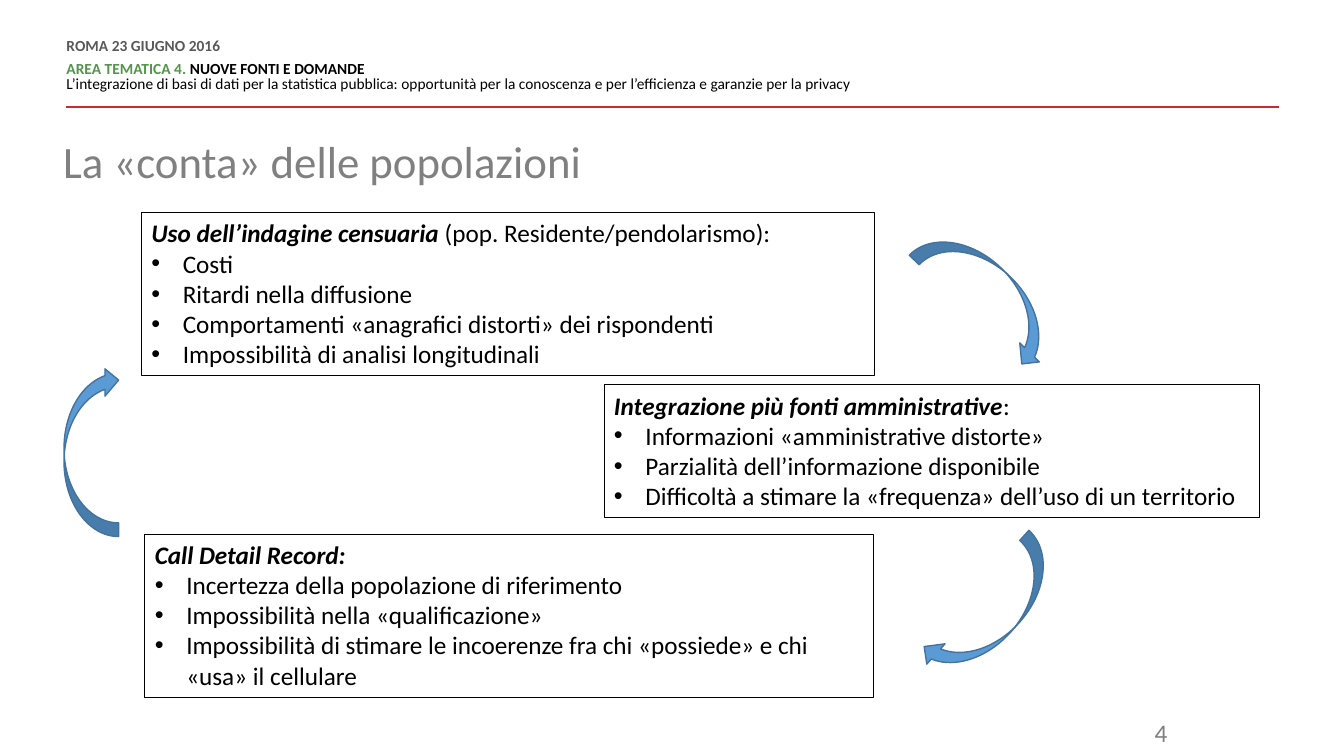
import dataclasses

import pptx
import pptx.dml.color
import pptx.enum.shapes
import pptx.enum.text
import pptx.oxml
import pptx.oxml.ns
import pptx.util

Pt = pptx.util.Pt
RGB = pptx.dml.color.RGBColor.from_string
ALIGN = pptx.enum.text.PP_ALIGN
ANCHOR = pptx.enum.text.MSO_ANCHOR
RECTANGLE = pptx.enum.shapes.MSO_SHAPE.RECTANGLE
CURVED_ARROW = pptx.enum.shapes.MSO_SHAPE.CURVED_DOWN_ARROW
STRAIGHT = pptx.enum.shapes.MSO_CONNECTOR.STRAIGHT


@dataclasses.dataclass(frozen=True)
class Theme:
    """Colours, font and type sizes of the slide."""
    font: str = "Calibri"
    ink: str = "000000"
    date: str = "595959"
    area: str = "53954A"
    rule: str = "C72A31"
    title: str = "808080"
    number: str = "7F7F7F"
    arrow: str = "5B9BD5"
    arrow_edge: str = "43739E"
    header_size: float = 11
    body_size: float = 18
    title_size: float = 32


THEME = Theme()

METHODS = [
    ((101, 152, 523.5, 116), "Uso dell’indagine censuaria ", "(pop. Residente/pendolarismo):",
     ["Costi", "Ritardi nella diffusione",
      "Comportamenti «anagrafici distorti» dei rispondenti",
      "Impossibilità di analisi longitudinali"]),
    ((431.5, 275, 468, 94.5), "Integrazione più fonti amministrative", ":",
     ["Informazioni «amministrative distorte»",
      "Parzialità dell’informazione disponibile",
      "Difficoltà a stimare la «frequenza» dell’uso di un territorio"]),
    ((103.5, 381.5, 520.5, 116.5), "Call Detail Record:", "",
     ["Incertezza della popolazione di riferimento",
      "Impossibilità nella «qualificazione»",
      "Impossibilità di stimare le incoerenze fra chi «possiede» e chi «usa» il cellulare"]),
]

CYCLE = [((646, 191, 121.5, 39), 44),
         ((648, 417.5, 121.5, 39), 132),
         ((4.5, 303, 121.5, 39), 270)]


def apply(target, values):
    """Set each named attribute of the target."""
    for name, value in values.items():
        setattr(target, name, value)


def frame_text(shape, inset=None, anchor=ANCHOR.TOP):
    """Prepare the shape's text frame and return it."""
    frame = shape.text_frame
    apply(frame, {"word_wrap": True, "vertical_anchor": anchor})
    if inset is not None:
        for side in ("left", "top", "right", "bottom"):
            setattr(frame, f"margin_{side}", Pt(inset))
    return frame


def add_run(paragraph, text, size, color, bold=False, italic=False):
    """Append one formatted run."""
    run = paragraph.add_run()
    run.text = text
    apply(run.font, {"name": THEME.font, "size": Pt(size), "bold": bold, "italic": italic})
    run.font.color.rgb = RGB(color)


def add_bullet(paragraph):
    """Give the paragraph a hanging round bullet."""
    properties = paragraph._p.get_or_add_pPr()
    properties.set("marL", str(Pt(22.5)))
    properties.set("indent", str(-Pt(22.5)))
    for tag, key, value in (("buFont", "typeface", "Arial"), ("buChar", "char", "•")):
        bullet = pptx.oxml.parse_xml(f'<a:{tag} {pptx.oxml.ns.nsdecls("a")} {key}="{value}"/>')
        properties.append(bullet)


def add_header(slide, left, top, width, height):
    """Draw the event lines and the rule below them."""
    event = slide.shapes.add_textbox(Pt(left), Pt(top), Pt(656), Pt(height))
    frame = frame_text(event, inset=0)
    lines = [
        [("ROMA 23 GIUGNO 2016", THEME.date, True)],
        [("AREA TEMATICA 4. ", THEME.area, True), ("NUOVE FONTI E DOMANDE", THEME.ink, True)],
        [("L’integrazione di basi di dati per la statistica pubblica: opportunità per la "
          "conoscenza e per l’efficienza e garanzie per la privacy", THEME.ink, False)],
    ]
    for index, runs in enumerate(lines):
        paragraph = frame.add_paragraph() if index else frame.paragraphs[0]
        apply(paragraph, {"line_spacing": Pt(10.8), "space_after": Pt(0 if index else 6)})
        for text, color, bold in runs:
            add_run(paragraph, text, THEME.header_size, color, bold)
    level = Pt(top + height - 2)
    rule = slide.shapes.add_connector(STRAIGHT, Pt(left + width), level, Pt(left), level)
    rule.line.color.rgb = RGB(THEME.rule)
    rule.line.width = Pt(2)
    rule._element.spPr.append(
        pptx.oxml.parse_xml(f'<a:effectLst {pptx.oxml.ns.nsdecls("a")}/>'))


def add_title(slide, left, top, width, height):
    """Place the slide title."""
    title = slide.shapes.title
    apply(title, {"left": Pt(left), "top": Pt(top), "width": Pt(width), "height": Pt(height)})
    paragraph = frame_text(title, inset=0).paragraphs[0]
    apply(paragraph, {"alignment": ALIGN.LEFT, "line_spacing": 0.9})
    add_run(paragraph, "La «conta» delle popolazioni", THEME.title_size, THEME.title)


def add_method(slide, box, heading, detail, limits):
    """Draw a framed method with its bulleted limits."""
    method = slide.shapes.add_shape(RECTANGLE, *map(Pt, box))
    method.shadow.inherit = False
    method.fill.background()
    method.line.color.rgb = RGB(THEME.ink)
    method.line.width = Pt(0.75)
    frame = frame_text(method)
    opening = frame.paragraphs[0]
    opening.alignment = ALIGN.LEFT
    add_run(opening, heading, THEME.body_size, THEME.ink, bold=True, italic=True)
    if detail:
        add_run(opening, detail, THEME.body_size, THEME.ink)
    for limit in limits:
        paragraph = frame.add_paragraph()
        paragraph.alignment = ALIGN.LEFT
        add_bullet(paragraph)
        add_run(paragraph, limit, THEME.body_size, THEME.ink)


def add_cycle_arrow(slide, box, rotation):
    """Draw one curved arrow of the cycle."""
    arrow = slide.shapes.add_shape(CURVED_ARROW, *map(Pt, box))
    arrow.rotation = rotation
    arrow.shadow.inherit = False
    arrow.fill.solid()
    arrow.fill.fore_color.rgb = RGB(THEME.arrow)
    arrow.line.color.rgb = RGB(THEME.arrow_edge)
    arrow.line.width = Pt(1)


def add_number(slide, left, top, width, height):
    """Place the page number."""
    number = slide.shapes.add_textbox(Pt(left), Pt(top), Pt(width), Pt(height))
    paragraph = frame_text(number, anchor=ANCHOR.MIDDLE).paragraphs[0]
    paragraph.alignment = ALIGN.RIGHT
    add_run(paragraph, "4", THEME.body_size, THEME.number)


def main():
    """Build and save the slide."""
    deck = pptx.Presentation()
    apply(deck, {"slide_width": Pt(960), "slide_height": Pt(540)})
    slide = deck.slides.add_slide(deck.slide_layouts[5])
    add_header(slide, 47.5, 28, 866, 50.5)
    add_number(slide, 756, 510.5, 85, 25)
    add_title(slide, 45, 100, 842, 58)
    for method in METHODS:
        add_method(slide, *method)
    for box, rotation in CYCLE:
        add_cycle_arrow(slide, box, rotation)
    deck.save("out.pptx")


if __name__ == "__main__":
    main()
